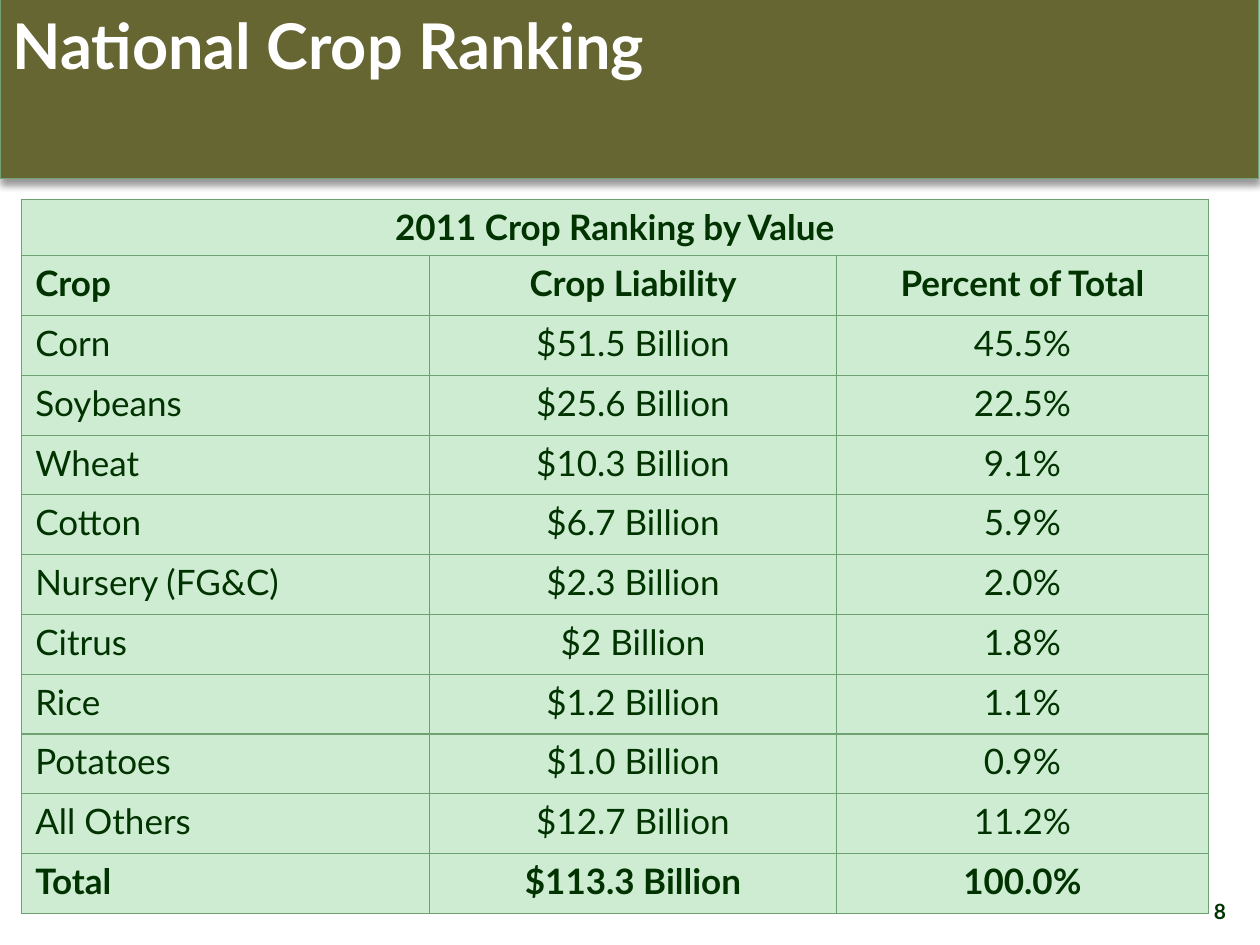
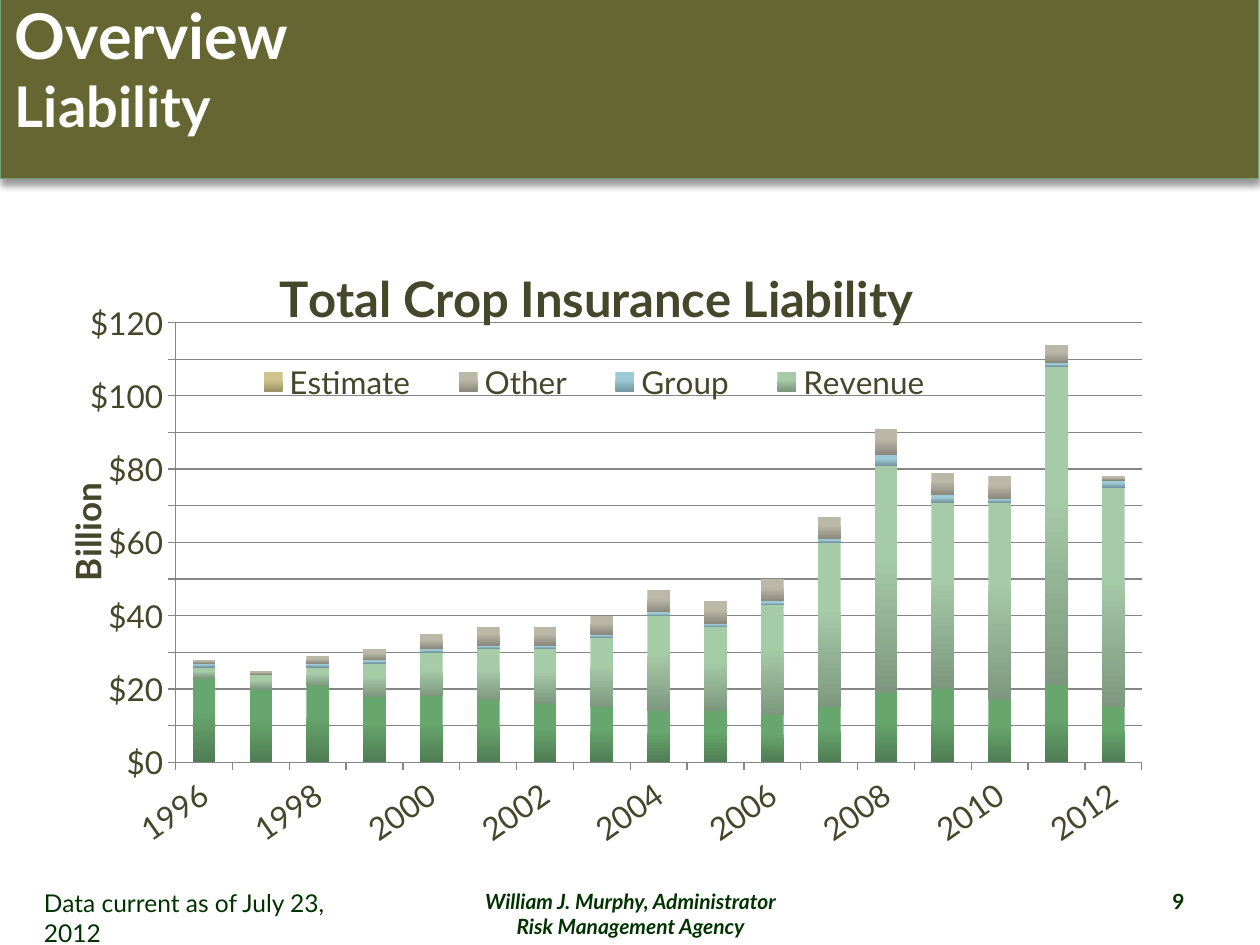
from lxml import etree
from pptx import Presentation
from pptx.chart.data import CategoryChartData
from pptx.dml.color import RGBColor
from pptx.enum.chart import XL_CHART_TYPE, XL_LEGEND_POSITION, XL_TICK_MARK
from pptx.enum.shapes import MSO_SHAPE
from pptx.enum.text import PP_ALIGN
from pptx.oxml import parse_xml
from pptx.oxml.ns import nsdecls, qn
from pptx.util import Inches, Pt

LEFT, MID, RIGHT = PP_ALIGN.LEFT, PP_ALIGN.CENTER, PP_ALIGN.RIGHT
RECT = MSO_SHAPE.RECTANGLE
STACK = XL_CHART_TYPE.COLUMN_STACKED
SIDE = XL_LEGEND_POSITION.RIGHT
OUT = XL_TICK_MARK.OUTSIDE

FONT = "Lato"
WHITE, OLIVE, EDGE = "FFFFFF", "666633", "72A376"
DARK, MINT, RULE = "003300", "CEECD2", "6EA172"
LABEL, GRID = "45472B", "868686"

CROPS = [
    ("Crop", "Crop Liability", "Percent of Total"),
    ("Corn", "$51.5 Billion", "45.5%"),
    ("Soybeans", "$25.6 Billion", "22.5%"),
    ("Wheat", "$10.3 Billion", "9.1%"),
    ("Cotton", "$6.7 Billion", "5.9%"),
    ("Nursery (FG&C)", "$2.3 Billion", "2.0%"),
    ("Citrus", "$2 Billion", "1.8%"),
    ("Rice", "$1.2 Billion", "1.1%"),
    ("Potatoes", "$1.0 Billion", "0.9%"),
    ("All Others", "$12.7 Billion", "11.2%"),
    ("Total", "$113.3 Billion", "100.0%"),
]
YEARS = [str(year) for year in range(1996, 2013)]
SERIES = [
    ("Series 1", "67A66C", "4F7D54",
     [23, 20, 21, 18, 18, 17, 16, 15, 14, 14, 13, 15, 19, 20, 17, 21, 15]),
    ("Revenue", "A6CBA7", "7D987E",
     [3, 4, 5, 9, 12, 14, 15, 19, 26, 23, 30, 45, 62, 51, 54, 87, 60]),
    ("Group", "9CCAD6", "7597A1",
     [1, 0, 1, 1, 1, 1, 1, 1, 1, 1, 1, 1, 3, 2, 1, 1, 2]),
    ("Other", "BBB8A7", "8C8A7D",
     [1, 1, 2, 3, 4, 5, 5, 5, 6, 6, 6, 6, 7, 6, 6, 5, 1]),
    ("Estimate", "CFC489", "9B9366", [None] * len(YEARS)),
]


def tint(code):
    """Turn a hex string into a colour."""
    return RGBColor.from_string(code)


def style(font, size, color, bold=False, italic=False):
    """Set the look of a font."""
    font.name, font.size = FONT, Pt(size)
    font.bold, font.italic = bold, italic
    font.color.rgb = tint(color)


def write(frame, lines, color, align=LEFT, bold=False, italic=False):
    """Write (text, size) lines as paragraphs."""
    frame.word_wrap = True
    for i, (text, size) in enumerate(lines):
        para = frame.add_paragraph() if i else frame.paragraphs[0]
        para.alignment = align
        run = para.add_run()
        run.text = text
        style(run.font, size, color, bold, italic)


def add_text(slide, box, lines, color=DARK, **look):
    """Add a text box."""
    shape = slide.shapes.add_textbox(*map(Inches, box))
    write(shape.text_frame, lines, color, **look)


def add_band(slide, box, lines):
    """Add the olive band and the title in its box."""
    band = slide.shapes.add_shape(
        RECT, Inches(0), Inches(-0.08), Inches(9.99), Inches(1.5))
    band.shadow.inherit = False
    band.fill.solid()
    band.fill.fore_color.rgb = tint(OLIVE)
    band.line.color.rgb = tint(EDGE)
    band.line.width = Pt(0.75)
    effects = band._element.spPr.find(qn("a:effectLst"))
    effects.append(parse_xml(
        f'<a:outerShdw {nsdecls("a")} blurRad="{Pt(4)}" dist="{Pt(3)}" '
        'dir="5400000" rotWithShape="0"><a:srgbClr val="000000">'
        '<a:alpha val="40000"/></a:srgbClr></a:outerShdw>'))
    add_text(slide, box, lines, WHITE, bold=True)


def add_number(slide, left, top, number):
    """Add the slide number."""
    add_text(slide, (left, top, 2.33, 0.27), [(number, 12)],
             align=RIGHT, bold=True)


def rule_cell(cell):
    """Draw thin lines on all four sides of a cell."""
    props = cell._tc.get_or_add_tcPr()
    for i, side in enumerate(("lnL", "lnR", "lnT", "lnB")):
        props.insert(i, parse_xml(
            f'<a:{side} {nsdecls("a")} w="{Pt(0.75)}"><a:solidFill>'
            f'<a:srgbClr val="{RULE}"/></a:solidFill></a:{side}>'))


def add_ranks(slide, box):
    """Add the crop ranking table."""
    rows = [("2011 Crop Ranking by Value", "", "")] + CROPS
    table = slide.shapes.add_table(len(rows), 3, *map(Inches, box)).table
    table.horz_banding = False
    for col, width in zip(table.columns, (3.24, 3.23, 2.95)):
        col.width = Inches(width)
    head = 0.45
    step = (box[3] - head) / len(CROPS)
    for i, row in enumerate(rows):
        table.rows[i].height = Inches(step if i else head)
        bold = i < 2 or i == len(rows) - 1
        for j, text in enumerate(row):
            cell = table.cell(i, j)
            cell.margin_left = cell.margin_right = Inches(0.11)
            cell.fill.solid()
            cell.fill.fore_color.rgb = tint(MINT)
            rule_cell(cell)
            if text:
                align = MID if j or not i else LEFT
                write(cell.text_frame, [(text, 20)], DARK, align, bold)
    table.cell(0, 0).merge(table.cell(0, 2))


def place(node, index, spot, inner=False):
    """Give a chart part a fixed spot, in shares of the chart."""
    for old in node.findall(qn("c:layout")):
        node.remove(old)
    layout = parse_xml(f'<c:layout {nsdecls("c")}><c:manualLayout/></c:layout>')
    items = [("layoutTarget", "inner")] if inner else []
    items += [("xMode", "edge"), ("yMode", "edge")]
    items += zip("xywh", spot)
    for tag, val in items:
        etree.SubElement(layout[0], qn("c:" + tag)).set("val", str(val))
    node.insert(index, layout)


def add_head(title, text, size, spot):
    """Write and place a chart or axis title."""
    write(title.text_frame, [(text, size)], LABEL, MID, True)
    place(title._element, 1, spot)


def style_axes(chart):
    """Set the look of both axes."""
    years, value = chart.category_axis, chart.value_axis
    for axis in (years, value):
        axis.major_tick_mark = OUT
        axis.format.line.color.rgb = tint(GRID)
        style(axis.tick_labels.font, 18, LABEL)
    body = years._element.find(qn("c:txPr")).find(qn("a:bodyPr"))
    body.set("rot", "-2100000")
    value.minimum_scale, value.maximum_scale = 0, 120
    value.major_unit = 10
    value.major_gridlines.format.line.color.rgb = tint(GRID)
    value.tick_labels.number_format = "\\$#,##0"
    value.tick_labels.number_format_is_linked = False
    add_head(value.axis_title, "Billion", 20, (0.03, 0.38))


def add_legend(chart):
    """Add the legend without its first entry."""
    chart.has_legend = True
    legend = chart.legend
    legend.position = SIDE
    legend.include_in_layout = False
    style(legend.font, 18, LABEL)
    legend._element.insert(1, parse_xml(
        f'<c:legendEntry {nsdecls("c")}><c:idx val="0"/>'
        '<c:delete val="1"/></c:legendEntry>'))
    place(legend._element, 2, (0.18, 0.2, 0.65, 0.08))


def add_bars(slide, box):
    """Add the stacked liability chart."""
    data = CategoryChartData()
    data.categories = YEARS
    for name, _, _, vals in SERIES:
        data.add_series(name, vals)
    chart = slide.shapes.add_chart(STACK, *map(Inches, box), data).chart
    style(chart.font, 18, LABEL)
    chart.has_title = True
    add_head(chart.chart_title, "Total Crop Insurance Liability", 28,
             (0.22, 0.05))
    plot = chart.plots[0]
    plot.gap_width, plot.overlap = 150, 100
    plot.vary_by_categories = False
    for bars, (_, light, deep, _) in zip(plot.series, SERIES):
        fill = bars.format.fill
        fill.gradient()
        fill.gradient_angle = 270
        for stop, code, pos in zip(fill.gradient_stops, (light, deep), (0.4, 1)):
            stop.color.rgb = tint(code)
            stop.position = pos
    style_axes(chart)
    add_legend(chart)
    area = chart._chartSpace.chart.plotArea
    place(area, 0, (0.136, 0.152, 0.852, 0.655), True)


def rank_slide(slide):
    """Build the crop ranking slide."""
    add_band(slide, (0, 0, 5.92, 1.25), [("National Crop Ranking", 36)])
    add_ranks(slide, (0.17, 1.58, 9.42, 5.67))
    add_number(slide, 7.5, 7.08, "8")


def chart_slide(slide):
    """Build the liability slide."""
    add_band(slide, (0.02, -0.08, 6.08, 1.55),
             [("Overview", 36), ("Liability", 32)])
    add_bars(slide, (0.17, 1.75, 9, 5.33))
    add_text(slide, (3.42, 7, 3.17, 0.27),
             [("William J. Murphy, Administrator", 12),
              ("Risk Management Agency", 12)],
             align=MID, bold=True, italic=True)
    add_number(slide, 7.17, 7, "9")
    add_text(slide, (0.25, 7, 2.75, 0.34),
             [("Data current as of July 23, 2012", 14)])


def main():
    """Build and save the deck."""
    deck = Presentation()
    deck.slide_width, deck.slide_height = Inches(10), Inches(7.5)
    for build in (rank_slide, chart_slide):
        build(deck.slides.add_slide(deck.slide_layouts[6]))
    deck.save("out.pptx")


if __name__ == "__main__":
    main()
